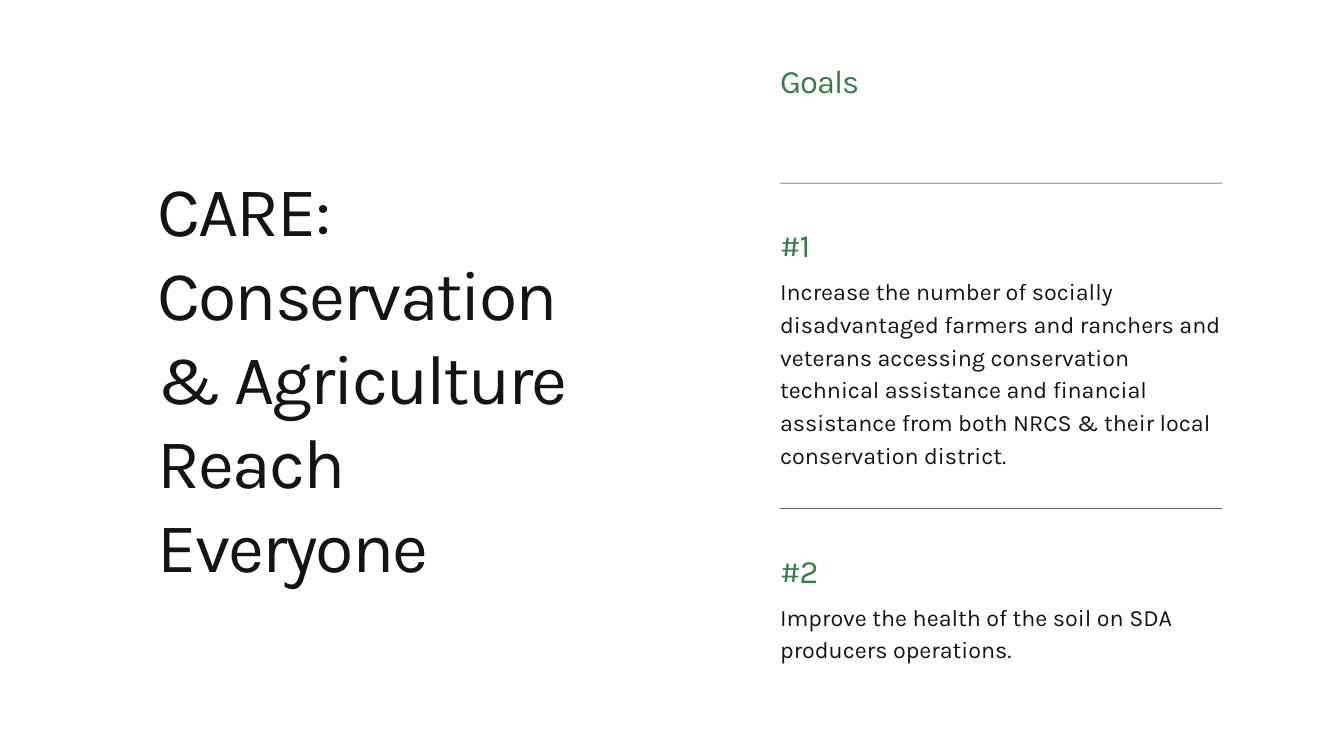
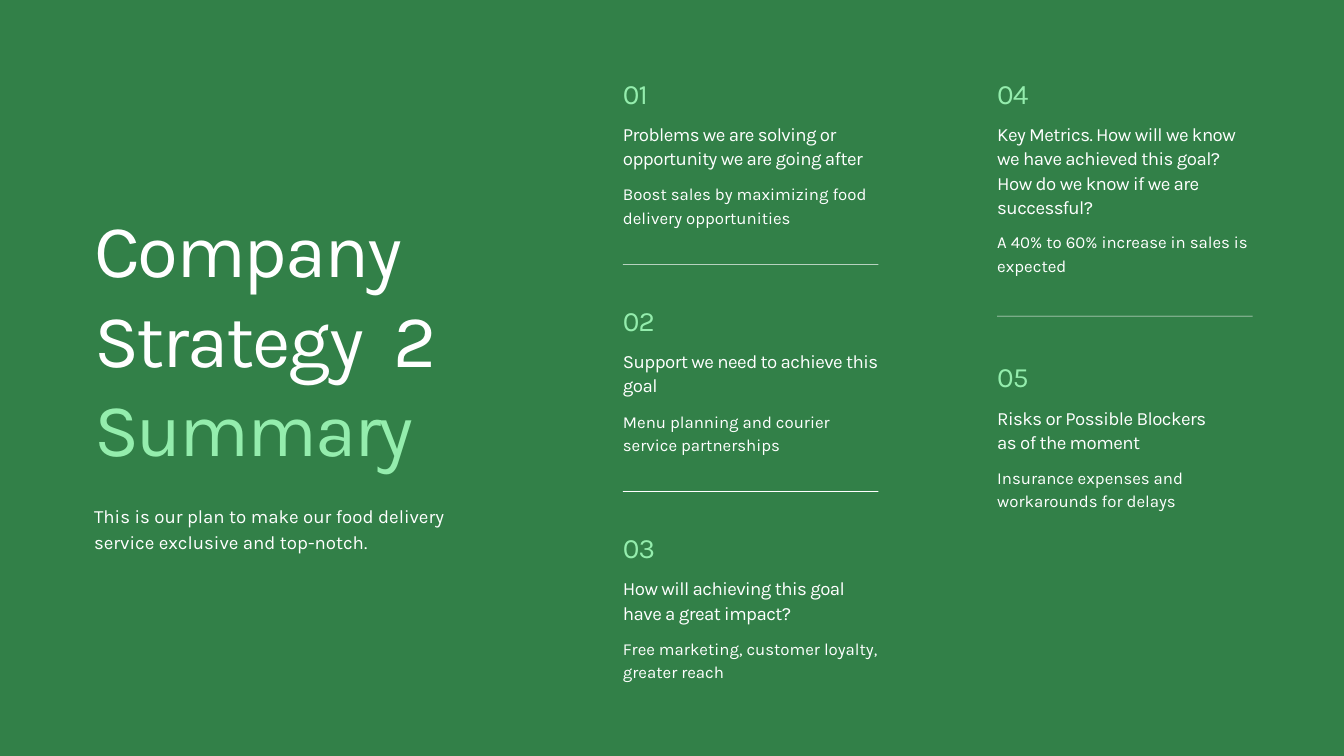
"""Build the CARE goals slide and the strategy summary slide."""
from dataclasses import dataclass

from pptx import Presentation
from pptx.dml.color import RGBColor
from pptx.enum.shapes import MSO_SHAPE
from pptx.enum.text import MSO_ANCHOR, MSO_AUTO_SIZE, PP_ALIGN
from pptx.util import Inches, Pt

RECTANGLE = MSO_SHAPE.RECTANGLE
TOP = MSO_ANCHOR.TOP
NO_FIT = MSO_AUTO_SIZE.NONE
LEFT = PP_ALIGN.LEFT
TITLE_SLIDE, TITLE_ONLY = 0, 5


@dataclass(frozen=True)
class TextStyle:
    """Type size, line height and letter spacing in points."""
    size: float
    leading: float
    tracking: float = 0


@dataclass(frozen=True)
class Theme:
    """Colours, font and text styles of the deck."""
    font: str = "Karla"
    white: RGBColor = RGBColor(0xFF, 0xFF, 0xFF)
    ink: RGBColor = RGBColor(0x14, 0x14, 0x14)
    green: RGBColor = RGBColor(0x32, 0x80, 0x48)
    mint: RGBColor = RGBColor(0x94, 0xED, 0xAD)
    goal_title: TextStyle = TextStyle(75, 90, -2.2)
    goal_heading: TextStyle = TextStyle(35, 42, -1.1)
    goal_body: TextStyle = TextStyle(25, 35)
    summary_title: TextStyle = TextStyle(80, 96, -2.4)
    intro: TextStyle = TextStyle(20, 28)
    number: TextStyle = TextStyle(30, 39, -0.9)
    question: TextStyle = TextStyle(20, 26, -0.6)
    answer: TextStyle = TextStyle(18, 25.2)


@dataclass(frozen=True)
class Column:
    """A column of numbered entries with gaps around its dividers."""
    left: float
    gap_above: float
    gap_below: float
    entries: tuple


THEME = Theme()

GOALS = (
    ("#1", 2.72, 6,
     "Increase the number of socially disadvantaged farmers and ranchers and "
     "veterans accessing conservation technical assistance and financial "
     "assistance from both NRCS & their local conservation district."),
    ("#2", 7.56, 2,
     "Improve the health of the soil on SDA producers operations."),
)

COLUMNS = (
    Column(9.27, 0.57, 0.54, (
        ("01", 2, "Problems we are solving or opportunity we are going after",
         "Boost sales by maximizing food delivery opportunities"),
        ("02", 2, "Support we need to achieve this goal",
         "Menu planning and courier service partnerships"),
        ("03", 2, "How will achieving this goal have a great impact?",
         "Free marketing, customer loyalty, greater reach"),
    )),
    Column(14.84, 0.63, 0.61, (
        ("04", 4, "Key Metrics. How will we know we have achieved this goal? "
         "How do we know if we are successful?",
         "A 40% to 60% increase in sales is expected"),
        ("05", 2, "Risks or Possible Blockers\nas of the moment",
         "Insurance expenses and workarounds for delays"),
    )),
)


def add_page(deck, layout, background):
    """Add a page with a plain background."""
    page = deck.slides.add_slide(deck.slide_layouts[layout])
    page.background.fill.solid()
    page.background.fill.fore_color.rgb = background
    return page


def add_span(para, text, style, color):
    """Add one formatted run to a paragraph."""
    span = para.add_run()
    span.text = text
    span.font.name = THEME.font
    span.font.size = Pt(style.size)
    span.font.color.rgb = color
    if style.tracking:
        span.font._element.set("spc", str(round(style.tracking * 100)))


def fill_text(box, style, paragraphs):
    """Fill a box with paragraphs, each a list of text and colour pairs."""
    frame = box.text_frame
    frame.word_wrap = True
    frame.auto_size = NO_FIT
    frame.vertical_anchor = TOP
    frame.margin_left = frame.margin_right = 0
    frame.margin_top = frame.margin_bottom = 0
    for index, spans in enumerate(paragraphs):
        para = frame.add_paragraph() if index else frame.paragraphs[0]
        para.alignment = LEFT
        para.line_spacing = Pt(style.leading)
        para.space_before = para.space_after = Pt(0)
        for text, color in spans:
            add_span(para, text, style, color)


def fill_placeholder(box, area, style, spans):
    """Move a placeholder and fill it with one paragraph."""
    box.left, box.top, box.width, box.height = map(Inches, area)
    fill_text(box, style, [spans])


def add_text(page, area, text, style, color):
    """Add a text box with one paragraph for each line of text."""
    box = page.shapes.add_textbox(*map(Inches, area))
    fill_text(box, style, [[(line, color)] for line in text.split("\n")])


def add_divider(page, left, top, width, color):
    """Add a hairline bar."""
    bar = page.shapes.add_shape(RECTANGLE, *map(Inches, (left, top, width, 0.01)))
    bar.shadow.inherit = False
    bar.fill.solid()
    bar.fill.fore_color.rgb = color
    bar.line.fill.background()


def add_goal_heading(page, left, top, text):
    """Add a green heading in the goals column."""
    add_text(page, (left, top, 1.63, 0.6), text, THEME.goal_heading, THEME.green)


def add_goals(page, left, width):
    """Add the goals, each under a divider."""
    add_goal_heading(page, left, 0.91, "Goals")
    for label, top, lines, text in GOALS:
        add_divider(page, left, top, width, THEME.ink)
        add_goal_heading(page, left, top + 0.63, label)
        add_text(page, (left, top + 1.34, width, 0.48 * lines - 0.02), text,
                 THEME.goal_body, THEME.ink)


def add_column(page, column, width=3.8):
    """Stack the numbered entries of a column with dividers between them."""
    left, top = column.left, 1.09
    answer_height = 0.67
    for index, (number, lines, question, answer) in enumerate(column.entries):
        if index:
            add_divider(page, left, top, width, THEME.white)
            top += column.gap_below
        question_height = 0.355 * lines
        answer_top = top + 0.71 + question_height + 0.18
        add_text(page, (left, top, width, 0.54), number, THEME.number, THEME.mint)
        add_text(page, (left, top + 0.71, width, question_height), question,
                 THEME.question, THEME.white)
        add_text(page, (left, answer_top, width, answer_height), answer,
                 THEME.answer, THEME.white)
        top = answer_top + answer_height + column.gap_above


def build_goals_page(deck):
    """Build the page with the programme name and its goals."""
    page = add_page(deck, TITLE_ONLY, THEME.white)
    fill_placeholder(page.shapes.title, (2.35, 2.48, 6.48, 6.27), THEME.goal_title,
                     [("CARE: Conservation & Agriculture Reach Everyone", THEME.ink)])
    add_goals(page, 11.61, 6.58)


def build_summary_page(deck):
    """Build the page with the five points of the strategy."""
    page = add_page(deck, TITLE_SLIDE, THEME.green)
    fill_placeholder(page.shapes.title, (1.4, 3.02, 6.02, 4.02), THEME.summary_title,
                     [("Company Strategy  2 ", THEME.white), ("Summary", THEME.mint)])
    fill_placeholder(page.placeholders[1], (1.4, 7.46, 6.02, 0.76), THEME.intro,
                     [("This is our plan to make our food delivery service "
                       "exclusive and top-notch.", THEME.white)])
    for column in COLUMNS:
        add_column(page, column)


def main():
    """Build and save the deck."""
    deck = Presentation()
    deck.slide_width, deck.slide_height = Inches(20), Inches(11.25)
    build_goals_page(deck)
    build_summary_page(deck)
    deck.save("out.pptx")


if __name__ == "__main__":
    main()
